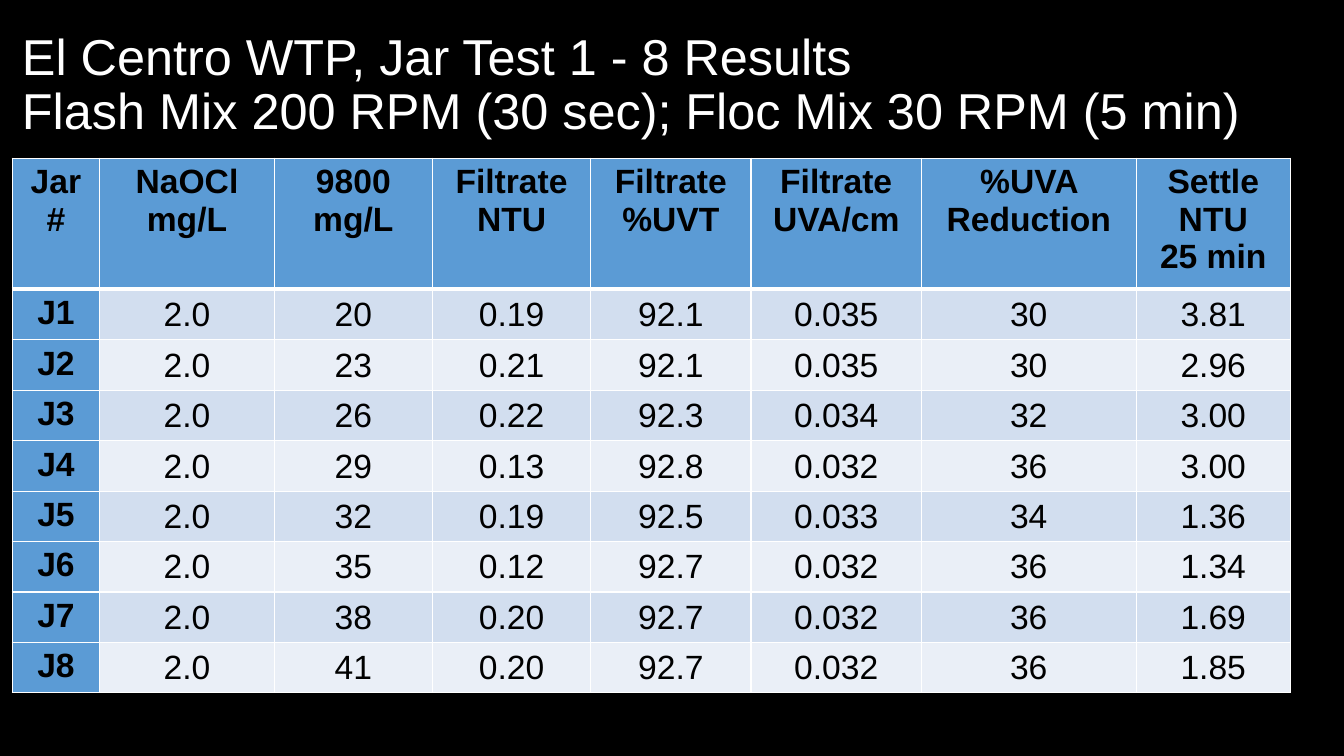
from dataclasses import dataclass

from lxml import etree
from pptx import Presentation
from pptx.dml.color import RGBColor
from pptx.enum.text import MSO_ANCHOR, PP_ALIGN
from pptx.oxml.ns import qn
from pptx.slide import Slide
from pptx.table import _Cell
from pptx.text.text import _Paragraph
from pptx.util import Inches, Pt

CENTER = PP_ALIGN.CENTER
MIDDLE = MSO_ANCHOR.MIDDLE
TOP = MSO_ANCHOR.TOP

FONT = "Arial"
COLORS = {
    "background": "000000",
    "title": "FFFFFF",
    "text": "000000",
    "border": "FFFFFF",
    "heading": "5B9BD5",
    "odd": "D2DEEF",
    "even": "EAEFF7",
}
TITLE_LINES = (
    "El Centro WTP, Jar Test 1 - 8 Results",
    "Flash Mix 200 RPM (30 sec); Floc Mix 30 RPM (5 min)",
)
HEADER_HEIGHT = 1.22
JAR_HEIGHT = 0.47
NAOCL_DOSE = "2.0"


@dataclass(frozen=True)
class Column:
    lines: tuple[str, ...]
    width: float


@dataclass(frozen=True)
class JarResult:
    dose: str
    ntu: str
    uvt: str
    uva: str
    reduction: str
    settled: str


COLUMNS = (
    Column(("Jar#",), 0.87),
    Column(("NaOCl", "mg/L"), 1.73),
    Column(("9800", "mg/L"), 1.57),
    Column(("Filtrate", "NTU"), 1.57),
    Column(("Filtrate", "%UVT"), 1.59),
    Column(("Filtrate", "UVA/cm"), 1.69),
    Column(("%UVA Reduction",), 2.13),
    Column(("Settle", "NTU", "25 min"), 1.53),
)
RESULTS = (
    JarResult("20", "0.19", "92.1", "0.035", "30", "3.81"),
    JarResult("23", "0.21", "92.1", "0.035", "30", "2.96"),
    JarResult("26", "0.22", "92.3", "0.034", "32", "3.00"),
    JarResult("29", "0.13", "92.8", "0.032", "36", "3.00"),
    JarResult("32", "0.19", "92.5", "0.033", "34", "1.36"),
    JarResult("35", "0.12", "92.7", "0.032", "36", "1.34"),
    JarResult("38", "0.20", "92.7", "0.032", "36", "1.69"),
    JarResult("41", "0.20", "92.7", "0.032", "36", "1.85"),
)


def color(name: str) -> RGBColor:
    return RGBColor.from_string(COLORS[name])


def add_span(para: _Paragraph, text: str, size: int, color_name: str, bold: bool = False) -> None:
    span = para.add_run()
    span.text = text
    span.font.name = FONT
    span.font.size = Pt(size)
    span.font.bold = bold
    span.font.color.rgb = color(color_name)


def add_title(page: Slide) -> None:
    box = page.shapes.add_textbox(Inches(0.12), Inches(0.13), Inches(13.03), Inches(1.45))
    frame = box.text_frame
    frame.word_wrap = True
    frame.vertical_anchor = MIDDLE
    para = frame.paragraphs[0]
    para.line_spacing = 0.9
    for index, line in enumerate(TITLE_LINES):
        if index:
            para.add_line_break()
        add_span(para, line, 36, "title")


def set_borders(cell: _Cell, top: int, bottom: int) -> None:
    """Draw the four cell edges; the sides are always one point wide."""
    properties = cell._tc.get_or_add_tcPr()
    for tag, width in (("a:lnL", 1), ("a:lnR", 1), ("a:lnT", top), ("a:lnB", bottom)):
        line = etree.SubElement(properties, qn(tag), w=str(Pt(width)))
        fill = etree.SubElement(line, qn("a:solidFill"))
        etree.SubElement(fill, qn("a:srgbClr"), val=COLORS["border"])


def fill_cell(cell: _Cell, lines: tuple[str, ...], fill: str, row: int, heading: bool) -> None:
    set_borders(cell, top=3 if row == 1 else 1, bottom=3 if row == 0 else 1)
    cell.fill.solid()
    cell.fill.fore_color.rgb = color(fill)
    cell.vertical_anchor = TOP if heading else MIDDLE
    if not heading:
        cell.margin_left = cell.margin_right = cell.margin_top = Inches(0.01)
        cell.margin_bottom = Inches(0)
    frame = cell.text_frame
    for index, line in enumerate(lines):
        para = frame.add_paragraph() if index else frame.paragraphs[0]
        para.alignment = CENTER
        add_span(para, line, 24, "text", bold=heading)


def add_results_table(page: Slide) -> None:
    width = sum(column.width for column in COLUMNS)
    height = HEADER_HEIGHT + JAR_HEIGHT * len(RESULTS)
    table = page.shapes.add_table(
        len(RESULTS) + 1, len(COLUMNS), Inches(0.12), Inches(1.57), Inches(width), Inches(height)
    ).table
    table.horz_banding = False
    table.first_col = True
    table.rows[0].height = Inches(HEADER_HEIGHT)
    for index, column in enumerate(COLUMNS):
        table.columns[index].width = Inches(column.width)
        fill_cell(table.cell(0, index), column.lines, "heading", 0, heading=True)

    for row, jar in enumerate(RESULTS, start=1):
        table.rows[row].height = Inches(JAR_HEIGHT)
        band = "odd" if row % 2 else "even"
        values = (f"J{row}", NAOCL_DOSE, jar.dose, jar.ntu, jar.uvt, jar.uva, jar.reduction, jar.settled)
        for index, value in enumerate(values):
            heading = index == 0
            fill = "heading" if heading else band
            fill_cell(table.cell(row, index), (value,), fill, row, heading)


def main() -> None:
    deck = Presentation()
    deck.slide_width = Inches(13.33)
    deck.slide_height = Inches(7.5)
    page = deck.slides.add_slide(deck.slide_layouts[6])
    page.background.fill.solid()
    page.background.fill.fore_color.rgb = color("background")
    add_title(page)
    add_results_table(page)
    deck.save("out.pptx")


if __name__ == "__main__":
    main()
